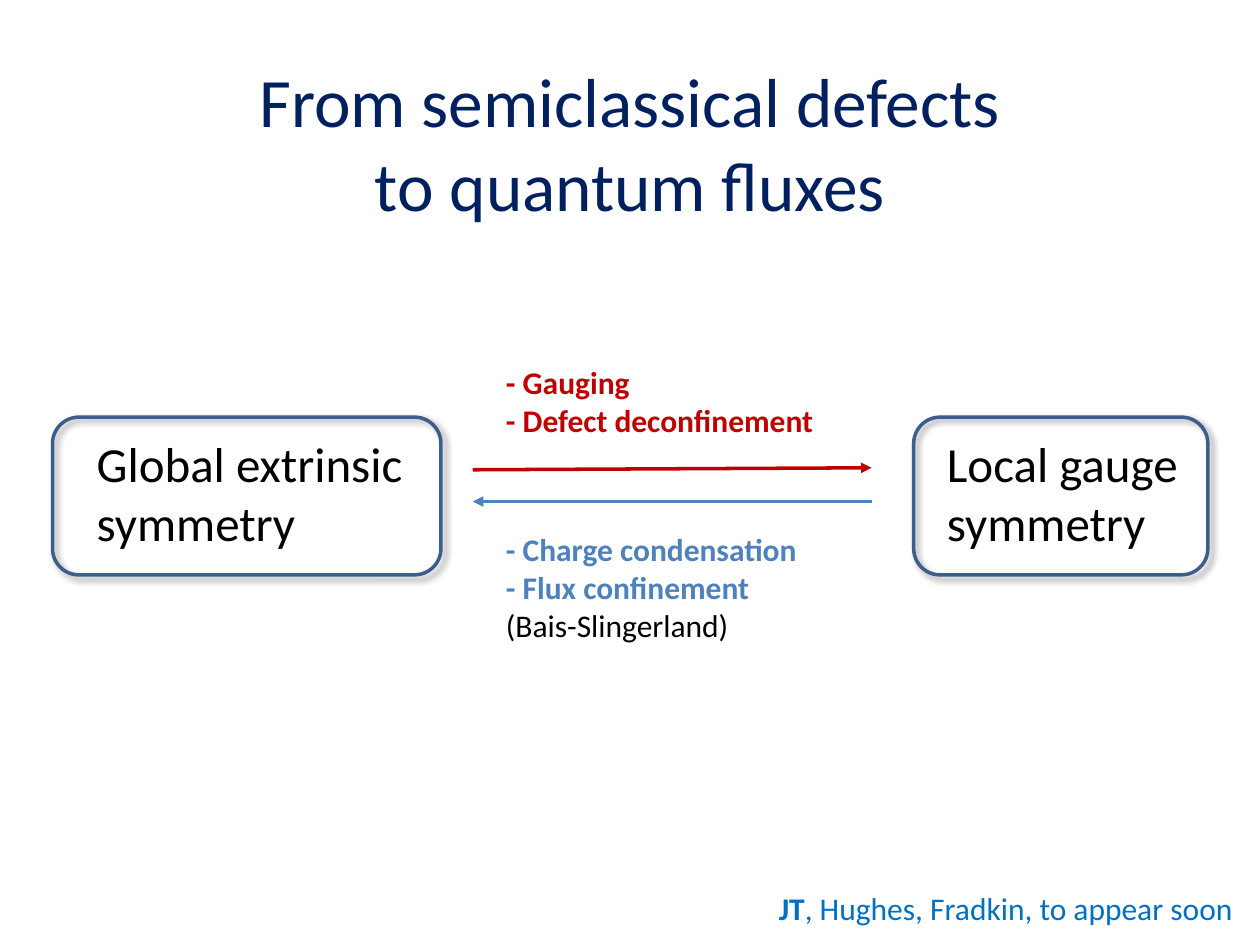
from dataclasses import dataclass

from lxml import etree
from pptx import Presentation
from pptx.dml.color import RGBColor
from pptx.enum.shapes import MSO_CONNECTOR as Conn, MSO_SHAPE as Shp
from pptx.enum.text import MSO_ANCHOR as Anchor, PP_ALIGN as Align
from pptx.oxml import parse_xml
from pptx.oxml.ns import nsdecls, qn
from pptx.util import Cm, Pt


@dataclass(frozen=True)
class Theme:
    font: str = "Calibri"
    title: str = "002060"
    body: str = "000000"
    frame: str = "3A5F8C"
    forward: str = "C00000"
    backward: str = "4F81BD"
    credit: str = "0070C0"
    title_size: float = 39.6
    box_size: float = 28
    note_size: float = 18
    line_width: float = 2


class SlideBuilder:
    def __init__(self, slide, theme):
        self.s = slide
        self.th = theme

    def text(self, x, y, w, h, paragraphs, size, align=Align.LEFT,
             anchor=Anchor.TOP, wrap=True):
        """Each paragraph is a list of (text, colour, bold) runs; None breaks the line."""
        sp = self.s.shapes.add_textbox(Cm(x), Cm(y), Cm(w), Cm(h))
        tf = sp.text_frame
        tf.word_wrap = wrap
        tf.vertical_anchor = anchor
        for i, runs in enumerate(paragraphs):
            p = tf.add_paragraph() if i else tf.paragraphs[0]
            p.alignment = align
            for run in runs:
                if run is None:
                    p.add_line_break()
                    continue
                r = p.add_run()
                r.text, color, r.font.bold = run
                r.font.name = self.th.font
                r.font.size = Pt(size)
                r.font.color.rgb = RGBColor.from_string(color)

    def style_line(self, line, color):
        line.color.rgb = RGBColor.from_string(color)
        line.width = Pt(self.th.line_width)

    def frame(self, x, y, w, h):
        """Unfilled rounded rectangle with a soft shadow."""
        sp = self.s.shapes.add_shape(Shp.ROUNDED_RECTANGLE, Cm(x), Cm(y), Cm(w), Cm(h))
        sp.fill.background()
        self.style_line(sp.line, self.th.frame)
        sp._element.spPr.append(parse_xml(
            f'<a:effectLst {nsdecls("a")}>'
            f'<a:outerShdw blurRad="{Pt(4)}" dist="{Pt(3)}" dir="2700000" algn="tl" rotWithShape="0">'
            '<a:srgbClr val="000000"><a:alpha val="40000"/></a:srgbClr>'
            '</a:outerShdw></a:effectLst>'))

    def arrow(self, x1, y1, x2, y2, color):
        cxn = self.s.shapes.add_connector(Conn.STRAIGHT, Cm(x1), Cm(y1), Cm(x2), Cm(y2))
        self.style_line(cxn.line, color)
        etree.SubElement(cxn.line._get_or_add_ln(), qn("a:tailEnd"), type="triangle")
        etree.SubElement(cxn._element.spPr, qn("a:effectLst"))


def main():
    th = Theme()
    prs = Presentation()
    prs.slide_width, prs.slide_height = Cm(25.4), Cm(19.05)
    b = SlideBuilder(prs.slides.add_slide(prs.slide_layouts[6]), th)

    b.text(1.27, 1.27, 22.86, 3.18,
           [[("From semiclassical defects", th.title, False), None,
             ("to quantum fluxes", th.title, False)]],
           th.title_size, Align.CENTER, Anchor.MIDDLE)

    symmetries = [
        ("Global extrinsic symmetry", 1.7, 6.78, 1.06, 7.83),
        ("Local gauge symmetry", 18.84, 5.29, 18.42, 5.93),
    ]
    for label, text_x, text_w, frame_x, frame_w in symmetries:
        b.text(text_x, 8.61, text_w, 2.64, [[(label, th.body, False)]], th.box_size)
        b.frame(frame_x, 8.41, frame_w, 3.18)

    left, right = 9.53, 17.57
    b.arrow(left, 9.47, right, 9.43, th.forward)
    b.text(9.95, 7.2, 7.41, 1.8,
           [[("- Gauging", th.forward, True)],
            [("- Defect deconfinement", th.forward, True)]], th.note_size)
    b.arrow(right, 10.11, left, 10.11, th.backward)
    b.text(9.95, 10.57, 7.83, 2.57,
           [[("- Charge condensation", th.backward, True)],
            [("- Flux confinement", th.backward, True)],
            [("(Bais-Slingerland)", th.body, False)]], th.note_size)

    b.text(15.45, 17.8, 9.78, 1.02,
           [[("JT", th.credit, True),
             (", Hughes, Fradkin, to appear soon", th.credit, False)]],
           th.note_size, wrap=False)

    prs.save("out.pptx")


if __name__ == "__main__":
    main()
